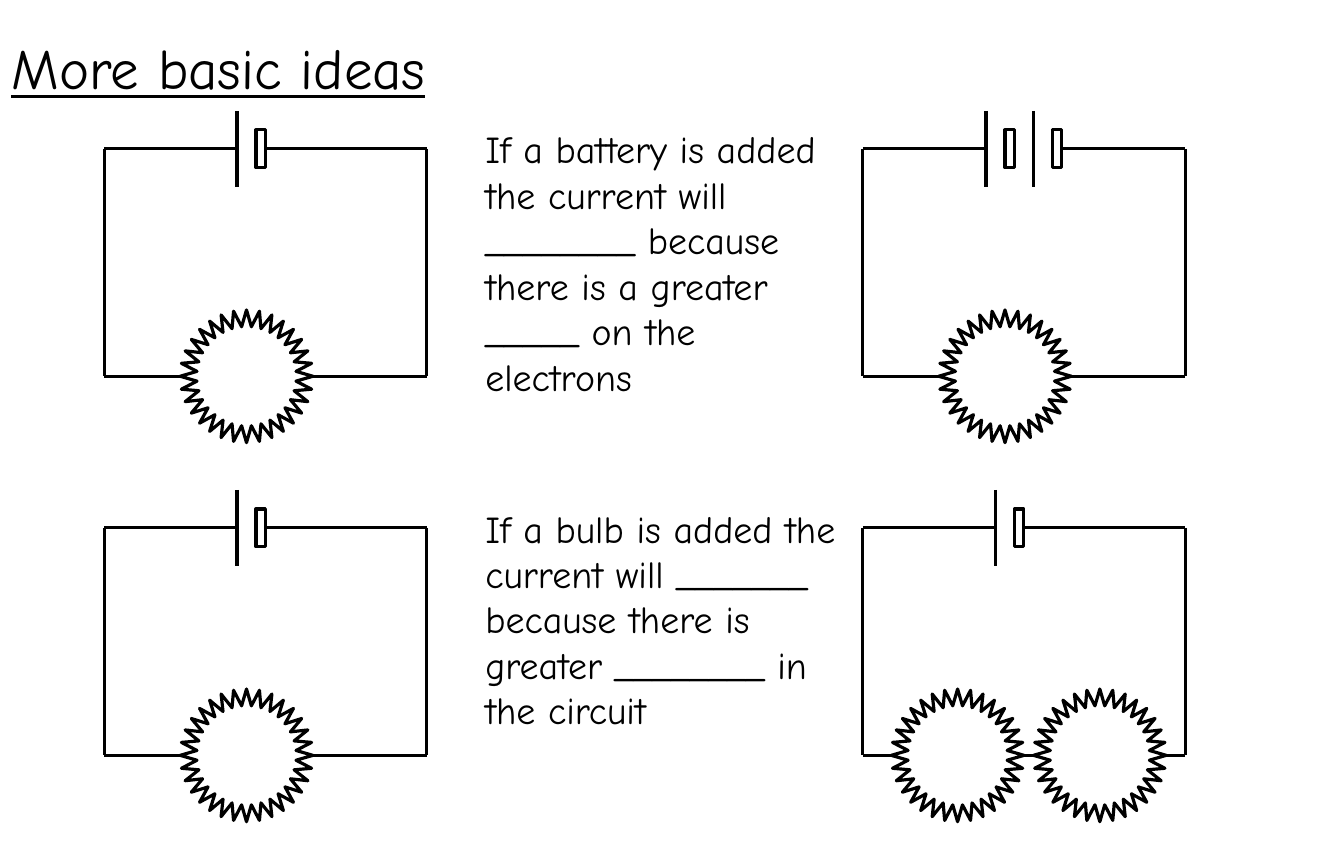
import dataclasses

import lxml.etree
import pptx
import pptx.dml.color
import pptx.enum.shapes
import pptx.enum.text
import pptx.oxml.ns
import pptx.util


@dataclasses.dataclass(frozen=True)
class Theme:
    ink: pptx.dml.color.RGBColor = pptx.dml.color.RGBColor(0, 0, 0)
    paper: pptx.dml.color.RGBColor = pptx.dml.color.RGBColor(255, 255, 255)
    font: str = "Comic Neue"
    title_size: int = 36
    body_size: int = 24
    wire_width: int = 2


THEME = Theme()
SHAPE = pptx.enum.shapes.MSO_SHAPE

SLIDE_COLUMNS, SLIDE_ROWS = 141.75, 90
CIRCUIT_WIDTH, CIRCUIT_HEIGHT = 34, 24
LEFT_CIRCUIT, NOTE_LEFT, RIGHT_CIRCUIT = 11, 50, 91
FIRST_ROW, ROW_PITCH = 15.7, 40
CELL_WIDTH, PLATE_REACH = 3, 4
LAMP_RADIUS, GLOW_RADIUS = 4, 7

ROWS = [
    {
        "note": "If a battery is added the current will ________ because "
                "there is a greater _____ on the electrons",
        "cells": [13, 18],
        "lamps": [15],
    },
    {
        "note": "If a bulb is added the current will _______ because "
                "there is greater ________ in the circuit",
        "cells": [14],
        "lamps": [10, 25],
    },
]


def grid(units):
    return pptx.util.Inches(units / 12)


def write(frame, text, size=THEME.body_size, underline=False,
          anchor=pptx.enum.text.MSO_ANCHOR.TOP,
          fit=pptx.enum.text.MSO_AUTO_SIZE.NONE):
    frame.word_wrap = True
    frame.auto_size = fit
    frame.vertical_anchor = anchor
    paragraph = frame.paragraphs[0]
    paragraph.alignment = pptx.enum.text.PP_ALIGN.LEFT
    run = paragraph.add_run()
    run.text = text
    run.font.name = THEME.font
    run.font.size = pptx.util.Pt(size)
    run.font.underline = underline
    run.font.color.rgb = THEME.ink


def draw_outline(line):
    line.color.rgb = THEME.ink
    line.width = pptx.util.Pt(THEME.wire_width)


def add_wire(shapes, x1, y1, x2, y2):
    wire = shapes.add_connector(
        pptx.enum.shapes.MSO_CONNECTOR.STRAIGHT,
        grid(x1), grid(y1), grid(x2), grid(y2))
    draw_outline(wire.line)
    properties = wire._element.spPr
    lxml.etree.SubElement(properties, pptx.oxml.ns.qn("a:effectLst"))


def add_part(shapes, kind, x, y, width, height):
    part = shapes.add_shape(kind, grid(x), grid(y), grid(width), grid(height))
    part.shadow.inherit = False
    part.fill.solid()
    part.fill.fore_color.rgb = THEME.paper
    draw_outline(part.line)
    return part


def add_cell(shapes, x, y):
    add_wire(shapes, x, y - PLATE_REACH, x, y + PLATE_REACH)
    add_part(shapes, SHAPE.RECTANGLE, x + 2, y - 2, 1, 4)


def add_lamp(shapes, x, y):
    lamp = add_part(shapes, SHAPE.STAR_32_POINT, x - GLOW_RADIUS,
                    y - GLOW_RADIUS, 2 * GLOW_RADIUS, 2 * GLOW_RADIUS)
    lamp.adjustments[0] = 0.375


def add_circuit(slide, left, top, cells, lamps):
    shapes = slide.shapes.add_group_shape().shapes
    right, bottom = left + CIRCUIT_WIDTH, top + CIRCUIT_HEIGHT
    for side in (left, right):
        add_wire(shapes, side, top, side, bottom)
    add_wire(shapes, left, top, left + cells[0], top)
    add_wire(shapes, left + cells[-1] + CELL_WIDTH, top, right, top)
    starts = [left] + [left + lamp + LAMP_RADIUS for lamp in lamps]
    ends = [left + lamp - LAMP_RADIUS for lamp in lamps] + [right]
    for start, end in zip(starts, ends):
        add_wire(shapes, start, bottom, end, bottom)
    for cell in cells:
        add_cell(shapes, left + cell, top)
    for lamp in lamps:
        add_lamp(slide.shapes, left + lamp, bottom)


def add_note(slide, top, text):
    note = slide.shapes.add_textbox(
        grid(NOTE_LEFT), grid(top), grid(40), grid(30.25))
    note.fill.solid()
    note.fill.fore_color.rgb = THEME.paper
    write(note.text_frame, text,
          fit=pptx.enum.text.MSO_AUTO_SIZE.SHAPE_TO_FIT_TEXT)


def add_title(slide, text):
    title = slide.shapes.title
    title.left, title.top = grid(0), grid(-0.5)
    title.width, title.height = grid(79), grid(15)
    write(title.text_frame, text, size=THEME.title_size, underline=True,
          anchor=pptx.enum.text.MSO_ANCHOR.MIDDLE)


def main():
    deck = pptx.Presentation()
    deck.slide_width = grid(SLIDE_COLUMNS)
    deck.slide_height = grid(SLIDE_ROWS)
    slide = deck.slides.add_slide(deck.slide_layouts[5])
    add_title(slide, "More basic ideas")
    for index, row in enumerate(ROWS):
        top = FIRST_ROW + index * ROW_PITCH
        add_note(slide, top - 3, row["note"])
        add_circuit(slide, LEFT_CIRCUIT, top, cells=[14], lamps=[15])
        add_circuit(slide, RIGHT_CIRCUIT, top, row["cells"], row["lamps"])
    deck.save("out.pptx")


if __name__ == "__main__":
    main()
